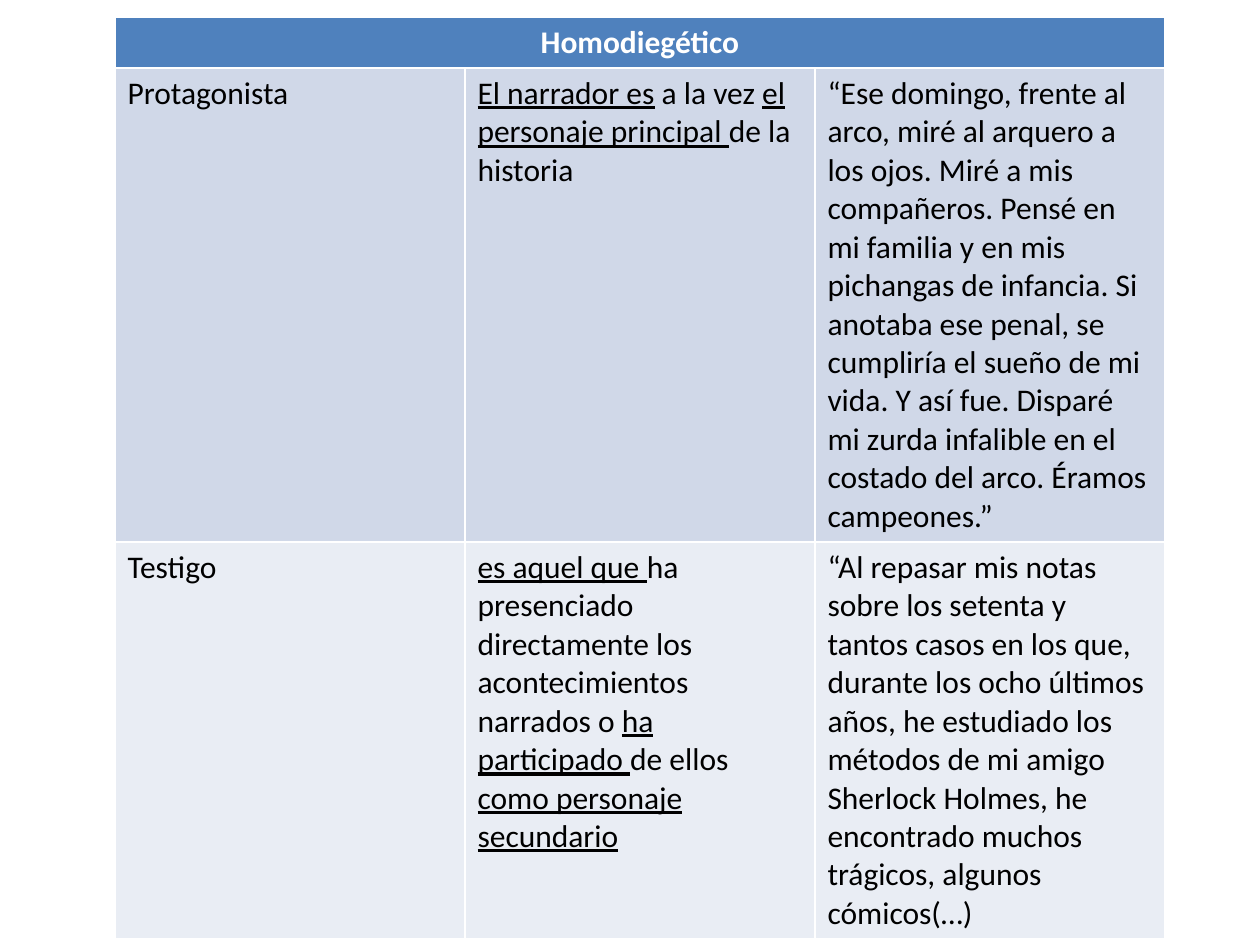
"""Build a slide with a table of homodiegetic narrator types."""
from pptx import Presentation
from pptx.dml.color import RGBColor
from pptx.enum.text import PP_ALIGN
from pptx.util import Pt

PX = 914400 // 126
CENTER = PP_ALIGN.CENTER
WHITE = RGBColor(0xFF, 0xFF, 0xFF)
BLACK = RGBColor(0x00, 0x00, 0x00)
BLUE = RGBColor(0x4F, 0x81, 0xBD)
LIGHT_BLUE = RGBColor(0xD0, 0xD8, 0xE8)
PALE_BLUE = RGBColor(0xE9, 0xED, 0xF4)

ROW_FILLS = [BLUE, LIGHT_BLUE, PALE_BLUE]
ROW_HEIGHTS = [51, 474, 397]
COLUMN_WIDTH = 350

NARRATORS = [
    (
        [("Protagonista", False)],
        [
            ("El narrador es", True),
            (" a la vez ", False),
            ("el personaje principal ", True),
            ("de la historia", False),
        ],
        [(
            "“Ese domingo, frente al arco, miré al arquero a los ojos. "
            "Miré a mis compañeros. Pensé en mi familia y en mis pichangas "
            "de infancia. Si anotaba ese penal, se cumpliría el sueño de mi "
            "vida. Y así fue. Disparé mi zurda infalible en el costado del "
            "arco. Éramos campeones.”", False,
        )],
    ),
    (
        [("Testigo", False)],
        [
            ("es aquel que ", True),
            ("ha presenciado directamente los acontecimientos narrados o ", False),
            ("ha participado ", True),
            ("de ellos ", False),
            ("como personaje secundario", True),
        ],
        [(
            "“Al repasar mis notas sobre los setenta y tantos casos en los "
            "que, durante los ocho últimos años, he estudiado los métodos de "
            "mi amigo Sherlock Holmes, he encontrado muchos trágicos, "
            "algunos cómicos(…)", False,
        )],
    ),
]


def add_span(para, text, color, bold=False, underline=False):
    span = para.add_run()
    span.text = text
    span.font.name = "Calibri"
    span.font.size = Pt(18)
    span.font.color.rgb = color
    span.font.bold = bold
    span.font.underline = underline


deck = Presentation()
deck.slide_width = 1260 * PX
deck.slide_height = 945 * PX
page = deck.slides.add_slide(deck.slide_layouts[6])

table = page.shapes.add_table(
    3, 3, 115 * PX, 17 * PX, 3 * COLUMN_WIDTH * PX, sum(ROW_HEIGHTS) * PX
).table
for column in table.columns:
    column.width = COLUMN_WIDTH * PX
for row, height, fill in zip(table.rows, ROW_HEIGHTS, ROW_FILLS):
    row.height = height * PX
    for cell in row.cells:
        cell.fill.solid()
        cell.fill.fore_color.rgb = fill

heading = table.cell(0, 0)
heading.merge(table.cell(0, 2))
heading_para = heading.text_frame.paragraphs[0]
heading_para.alignment = CENTER
add_span(heading_para, "Homodiegético", WHITE, bold=True)

for row_index, narrator in enumerate(NARRATORS, start=1):
    for column_index, spans in enumerate(narrator):
        para = table.cell(row_index, column_index).text_frame.paragraphs[0]
        for text, underline in spans:
            add_span(para, text, BLACK, underline=underline)

deck.save("out.pptx")
